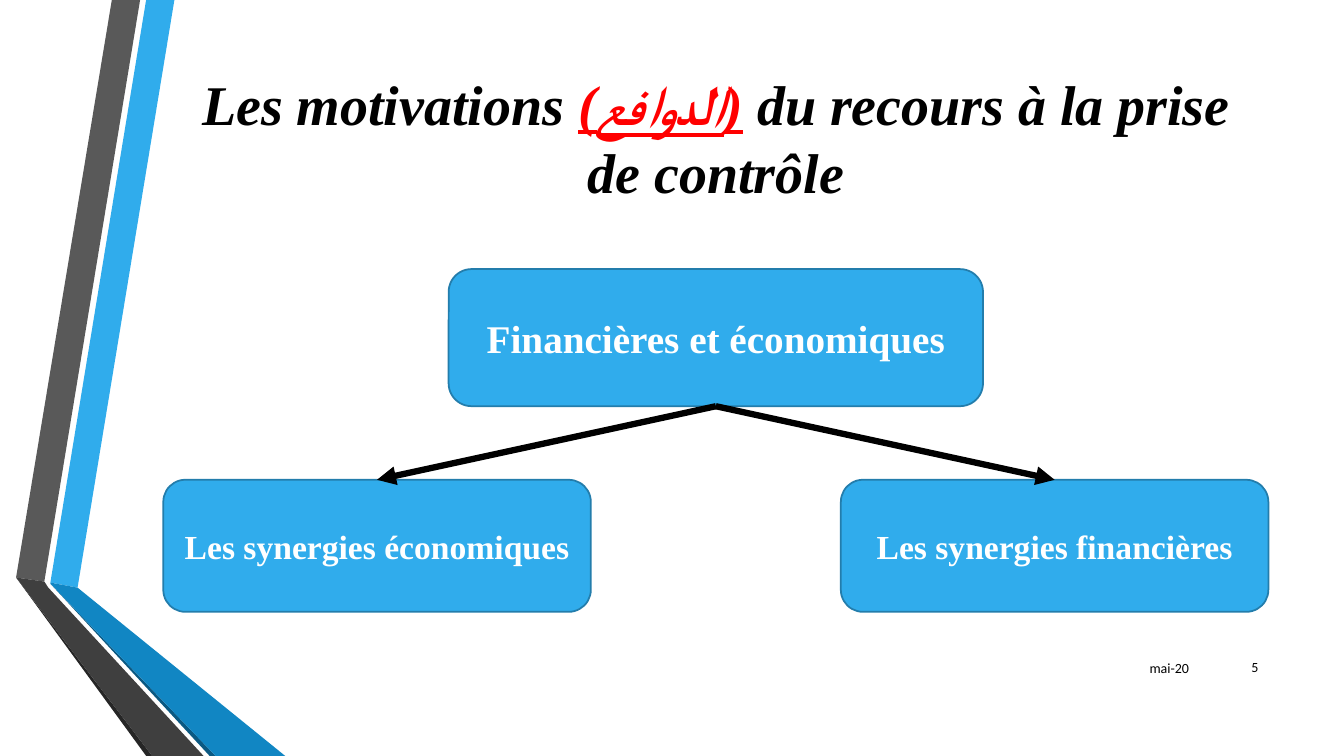
from lxml import etree
from pptx import Presentation
from pptx.dml.color import RGBColor
from pptx.enum.shapes import MSO_CONNECTOR, MSO_SHAPE
from pptx.enum.text import MSO_ANCHOR, PP_ALIGN
from pptx.oxml.ns import qn
from pptx.util import Inches, Pt

STRAIGHT = MSO_CONNECTOR.STRAIGHT
ROUNDED = MSO_SHAPE.ROUNDED_RECTANGLE
MIDDLE = MSO_ANCHOR.MIDDLE
CENTER, RIGHT = PP_ALIGN.CENTER, PP_ALIGN.RIGHT

BLACK = RGBColor(0x00, 0x00, 0x00)
WHITE = RGBColor(0xFF, 0xFF, 0xFF)
RED = RGBColor(0xFF, 0x00, 0x00)
SKY = RGBColor(0x30, 0xAC, 0xEC)
SKY_EDGE = RGBColor(0x23, 0x7D, 0xAC)
BLUE = RGBColor(0x11, 0x86, 0xC3)
NAVY = RGBColor(0x0B, 0x59, 0x82)
GREY = RGBColor(0x59, 0x59, 0x59)
DARK_GREY = RGBColor(0x3F, 0x3F, 0x3F)
CHARCOAL = RGBColor(0x26, 0x26, 0x26)

SERIF, SANS = "Times New Roman", "Calibri"

RIBBONS = [
    (SKY, [(0.5, 5.78), (0.77, 5.83), (1.73, 0), (1.45, 0)]),
    (GREY, [(1.39, 0), (1.11, 0), (0.16, 5.73), (0.44, 5.77)]),
    (CHARCOAL, [(0.16, 5.73), (1.45, 7.5), (1.51, 7.5)]),
    (NAVY, [(0.5, 5.79), (2.08, 7.5), (2.14, 7.5)]),
    (BLUE, [(0.5, 5.79), (2.14, 7.5), (2.83, 7.5), (0.77, 5.83), (0.5, 5.78)]),
    (DARK_GREY, [(2.02, 7.5), (0.48, 5.83), (0.44, 5.77), (0.16, 5.73), (1.51, 7.5)]),
]

TITLE_BOX = (1.62, 0.4, 10.96, 1.92)
TITLE = [
    ("Les motivations ", BLACK, False),
    ("(الدوافع)", RED, True),
    (" du recours à la prise de contrôle", BLACK, False),
]
ROOT = ("Financières et économiques", 2.67, 5.3, 1.36)
BRANCHES = ["Les synergies économiques", "Les synergies financières"]
BRANCH_TOP, BRANCH_WIDTH, BRANCH_HEIGHT = 4.76, 4.24, 1.31
FOOTER = [
    ("mai-20", (10.64, 6.43, 1.25, 0.4)),
    ("5", (11.98, 6.42, 0.6, 0.4)),
]


def add_text(shape, text, size=24, name=SERIF, color=WHITE, align=CENTER,
             bold=False, italic=False, underline=False):
    frame = shape.text_frame
    frame.word_wrap = True
    frame.vertical_anchor = MIDDLE
    para = frame.paragraphs[0]
    para.alignment = align
    span = para.add_run()
    span.text = text
    font = span.font
    font.size, font.name = Pt(size), name
    font.bold, font.italic, font.underline = bold, italic, underline
    font.color.rgb = color


def add_ribbon(page, color, points):
    corners = [(Inches(x), Inches(y)) for x, y in points]
    builder = page.shapes.build_freeform(*corners[0])
    builder.add_line_segments(corners[1:], close=True)
    ribbon = builder.convert_to_shape()
    ribbon.shadow.inherit = False
    ribbon.fill.solid()
    ribbon.fill.fore_color.rgb = color
    ribbon.line.fill.background()


def add_card(page, text, left, top, width, height, size):
    card = page.shapes.add_shape(ROUNDED, *map(Inches, (left, top, width, height)))
    card.shadow.inherit = False
    card.fill.solid()
    card.fill.fore_color.rgb = SKY
    card.line.color.rgb = SKY_EDGE
    card.line.width = Pt(1.25)
    add_text(card, text, size=size, bold=True)
    return card


def add_arrow(page, parent, child):
    arrow = page.shapes.add_connector(STRAIGHT, 0, 0, 0, 0)
    arrow.begin_connect(parent, 2)
    arrow.end_connect(child, 0)
    arrow.line.color.rgb = BLACK
    arrow.line.width = Pt(4.5)
    properties = arrow.line._get_or_add_ln()
    etree.SubElement(properties, qn("a:tailEnd"), type="triangle")
    etree.SubElement(arrow._element.spPr, qn("a:effectLst"))


def main():
    deck = Presentation()
    deck.slide_width, deck.slide_height = Inches(13.33), Inches(7.5)
    page = deck.slides.add_slide(deck.slide_layouts[5])

    for color, points in RIBBONS:
        add_ribbon(page, color, points)

    title = page.shapes.title
    title.left, title.top, title.width, title.height = map(Inches, TITLE_BOX)
    for text, color, underline in TITLE:
        add_text(title, text, size=40, color=color, bold=True, italic=True,
                 underline=underline)

    for text, place in FOOTER:
        box = page.shapes.add_textbox(*map(Inches, place))
        add_text(box, text, size=10, name=SANS, color=BLACK, align=RIGHT)

    left, _, width, _ = TITLE_BOX
    text, top, root_width, root_height = ROOT
    root_left = left + (width - root_width) / 2
    root = add_card(page, text, root_left, top, root_width, root_height, 28)

    step = width - BRANCH_WIDTH
    branches = [
        add_card(page, text, left + index * step, BRANCH_TOP,
                 BRANCH_WIDTH, BRANCH_HEIGHT, 24)
        for index, text in enumerate(BRANCHES)
    ]
    for branch in branches:
        add_arrow(page, root, branch)

    deck.save("out.pptx")


if __name__ == "__main__":
    main()
